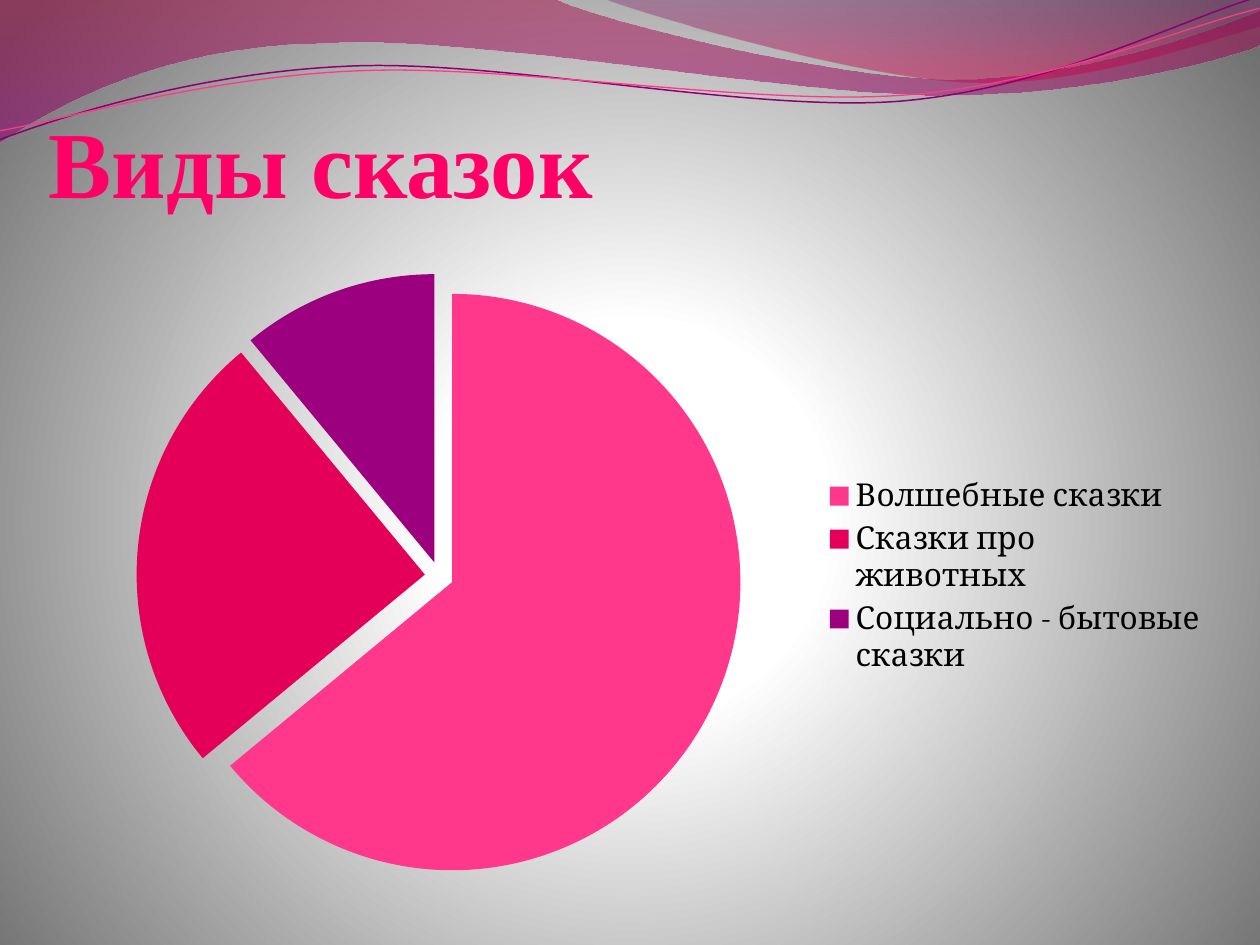
from lxml.etree import Element, SubElement, fromstring
from pptx import Presentation
from pptx.chart.data import CategoryChartData
from pptx.dml.color import RGBColor
from pptx.enum.chart import XL_CHART_TYPE, XL_LEGEND_POSITION
from pptx.enum.text import MSO_ANCHOR
from pptx.oxml.ns import nsdecls, qn
from pptx.util import Pt

PX = 914400 // 126
rgb = RGBColor.from_string


def shade(host, stops, way):
    marks = "".join(
        f'<a:gs pos="{pos * 1000}"><a:srgbClr val="{tone}">'
        f'<a:alpha val="{alpha * 1000}"/></a:srgbClr></a:gs>'
        for pos, tone, alpha in stops)
    grad = fromstring(f'<a:gradFill {nsdecls("a")} rotWithShape="1">'
                      f'<a:gsLst>{marks}</a:gsLst>{way}</a:gradFill>')
    host.replace(host.find(qn("a:solidFill")), grad)


def draw(start, parts, close):
    pen = shapes.build_freeform(*start, scale=PX)
    pen.add_line_segments([part[-2:] for part in parts], close)
    shape = pen.convert_to_shape()
    shape.shadow.inherit = False
    ends = [start] + [part[-2:] for part in parts]
    left = min(x for x, y in ends)
    top = min(y for x, y in ends)
    track = shape.element.find(".//" + qn("a:path"))
    unit = int(track.get("w")) // (max(x for x, y in ends) - left)
    for side, part in zip(track.findall(qn("a:lnTo")), parts):
        if len(part) == 6:
            bend = Element(qn("a:cubicBezTo"))
            for x, y in zip(part[::2], part[1::2]):
                SubElement(bend, qn("a:pt"), x=str((x - left) * unit), y=str((y - top) * unit))
            track.replace(side, bend)
    return shape


deck = Presentation()
deck.slide_width, deck.slide_height = 1260 * PX, 945 * PX
slide = deck.slides.add_slide(deck.slide_layouts[6])
shapes = slide.shapes

slide.background.fill.solid()
shade(slide.element.find(".//" + qn("p:bgPr")),
      [(0, "FFFFFF", 100), (25, "FFFFFF", 100), (100, "707070", 100)],
      '<a:path path="circle"><a:fillToRect l="10000" t="110000" r="10000" b="100000"/></a:path>')

waves = [
    ((0, 0),
     [(554, -1), (600, 21, 837, 79, 955, 79), (1074, 79, 1207, 33, 1260, 11),
      (1261, 45), (1239, 55, 1096, 96, 940, 95), (784, 95, 481, 35, 324, 43),
      (163, 45, 58, 105, -1, 142)],
     [(0, "A90042", 45), (100, "8E0073", 55)]),
    ((604, -1),
     [(641, 14, 859, 78, 969, 82), (1079, 87, 1211, 40, 1260, 26), (1260, 0)],
     [(0, "73005E", 30), (80, "C9004F", 45)]),
]
for start, parts, stops in waves:
    wave = draw(start, parts, True)
    wave.line.fill.background()
    wave.fill.solid()
    shade(wave.element.spPr, stops, '<a:lin ang="5400000" scaled="0"/>')

curves = [
    ((-3, 110),
     [(59, 90, 199, 52, 350, 53), (499, 53, 745, 118, 896, 114),
      (1049, 109, 1184, 45, 1260, 27)], "8A0070", 0.85),
    ((-2, 101),
     [(57, 94, 207, 57, 357, 58), (509, 58, 750, 112, 902, 108),
      (1052, 104, 1188, 52, 1262, 38)], "FF388C", 0.75),
]
for start, parts, tone, width in curves:
    curve = draw(start, parts, False)
    curve.rotation = 357.3
    curve.fill.background()
    curve.line.color.rgb = rgb(tone)
    curve.line.width = Pt(width)

title = shapes.add_textbox(49 * PX, 59 * PX, 1134 * PX, 158 * PX)
frame = title.text_frame
frame.word_wrap = True
frame.vertical_anchor = MSO_ANCHOR.BOTTOM
frame.margin_left = frame.margin_right = frame.margin_bottom = 0
frame.margin_top = 6 * PX
run = frame.paragraphs[0].add_run()
run.text = "Виды сказок"
run.font.name = "Times New Roman"
run.font.size = Pt(54)
run.font.bold = True
run.font.color.rgb = rgb("FF0066")

data = CategoryChartData()
data.categories = ["Волшебные сказки", "Сказки про животных", "Социально - бытовые сказки"]
data.add_series("Series 1", [64, 25, 11])
chart = shapes.add_chart(XL_CHART_TYPE.PIE, 59 * PX, 256 * PX, 1162 * PX, 640 * PX, data).chart
chart.has_title = False
chart.font.name = "Cambria"
chart.font.size = Pt(18)
chart.font.color.rgb = rgb("000000")
chart.has_legend = True
chart.legend.position = XL_LEGEND_POSITION.RIGHT
chart.legend.include_in_layout = False

plot = chart.plots[0]
plot.vary_by_categories = True
pie = plot.series[0]
for spot, tone in enumerate(["FF388C", "E40059", "9C007F"]):
    fill = pie.points[spot].format.fill
    fill.solid()
    fill.fore_color.rgb = rgb(tone)
burst = Element(qn("c:explosion"), val="5")
chart.element.find(".//" + qn("c:dPt")).addprevious(burst)

deck.save("out.pptx")
